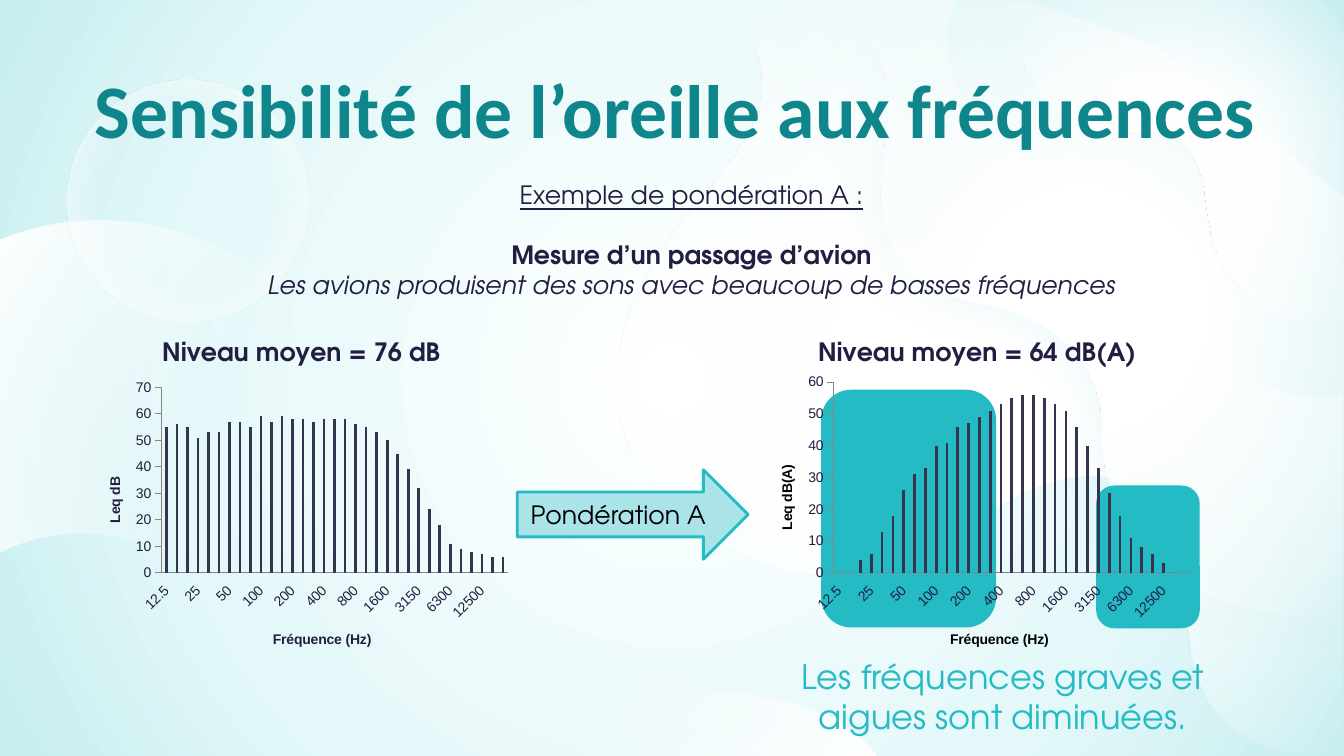
from lxml.etree import SubElement
from pptx import Presentation
from pptx.chart.data import CategoryChartData
from pptx.dml.color import RGBColor
from pptx.enum.chart import XL_CHART_TYPE, XL_TICK_LABEL_POSITION, XL_TICK_MARK
from pptx.enum.shapes import MSO_SHAPE
from pptx.enum.text import MSO_ANCHOR, MSO_AUTO_SIZE, PP_ALIGN
from pptx.oxml import parse_xml
from pptx.oxml.ns import nsdecls, qn
from pptx.util import Pt

COLORS = {"title": "0E868C", "text": "211E42", "teal": "24BBC4", "pale": "AAE3E8",
          "bar": "36334F", "axis": "868686", "black": "000000", "white": "FFFFFF",
          "mist": "E4F8F9", "aqua": "C7EDF0"}
BODY_FONT = "TeX Gyre Adventor"

# Gradient stops: position, colour, opacity in percent
BACKGROUND = [(0, "white", 100), (65, "mist", 100), (100, "aqua", 100)]
GLOW = [(0, "white", 100), (31, "white", 100), (100, "white", 0)]
RIM = [(0, "white", 0), (50, "white", 0), (100, "white", 100)]

# Outlines in inches: a start point, then lines (2 numbers) and cubic curves (6 numbers)
LARGE_WAVE = [
    (7.06, 0), (7.26, .17, 7.46, .36, 7.54, .61), (7.69, 1.12, 7.27, 1.62, 6.92, 2.03),
    (6.38, 2.66, 5.94, 3.5, 6.19, 4.29), (6.29, 4.59, 6.48, 4.85, 6.71, 5.07),
    (7.14, 5.47, 7.72, 5.72, 8.29, 5.72), (8.51, 5.72, 8.73, 5.68, 8.93, 5.6),
    (9.35, 5.44, 9.71, 5.13, 10.11, 4.92), (10.33, 4.81, 10.58, 4.73, 10.82, 4.73),
    (11.03, 4.73, 11.23, 4.79, 11.39, 4.92), (11.92, 5.36, 11.64, 6.24, 11.93, 6.86),
    (12.13, 7.28, 12.6, 7.5, 13.07, 7.5), (13.16, 7.5, 13.24, 7.49, 13.32, 7.48),
    (13.32, 3.9), (13.24, 3.93, 13.14, 3.94, 13.05, 3.94),
    (13.02, 3.94, 12.99, 3.94, 12.96, 3.93), (12.38, 3.89, 11.87, 3.43, 11.73, 2.86),
    (11.67, 2.63, 11.67, 2.39, 11.61, 2.16), (11.55, 1.92, 11.41, 1.69, 11.17, 1.62),
    (11.12, 1.6, 11.05, 1.59, 10.99, 1.59), (10.87, 1.59, 10.74, 1.62, 10.6, 1.62),
    (10.59, 1.62, 10.58, 1.62, 10.56, 1.62), (9.84, 1.62, 9.23, .82, 9.44, .12),
    (9.46, .08, 9.47, .04, 9.49, 0)]
MIDDLE_WAVE = [
    (8.18, .01), (8.18, .01, 8.93, .34, 8.8, 1.29), (8.67, 2.23, 8.68, 2.81, 9.72, 3.01),
    (10.76, 3.21, 10.96, 3.92, 10.93, 4.3), (10.91, 4.68, 11.13, 6.14, 13.3, 6.14),
    (13.31, 6.14, 13.32, 6.14, 13.33, 6.14), (13.33, 1.96), (11.44, .44), (10.21, .02),
    (8.18, .01)]
CORNER_WAVE = [
    (10.18, 0), (10.17, .04, 10.16, .07, 10.15, .1), (9.97, .67, 10.47, 1.33, 11.06, 1.33),
    (11.07, 1.33, 11.09, 1.33, 11.1, 1.33), (11.2, 1.33, 11.31, 1.31, 11.41, 1.31),
    (11.46, 1.31, 11.52, 1.31, 11.57, 1.33), (11.76, 1.39, 11.87, 1.58, 11.92, 1.77),
    (11.97, 1.96, 11.97, 2.16, 12.02, 2.35), (12.14, 2.81, 12.56, 3.19, 13.04, 3.23),
    (13.06, 3.23, 13.09, 3.23, 13.11, 3.23), (13.19, 3.23, 13.26, 3.22, 13.33, 3.21),
    (13.33, .31), (13.33, .14, 13.2, 0, 13.03, 0)]
LEFT_WAVE = [
    (5, 7.5), (5.08, 7.27, 4.98, 6.97, 4.77, 6.84), (4.65, 6.78, 4.53, 6.76, 4.4, 6.76),
    (4.22, 6.76, 4.03, 6.8, 3.85, 6.8), (3.83, 6.8, 3.82, 6.8, 3.8, 6.8),
    (3.38, 6.79, 3, 6.54, 2.68, 6.27), (2.35, 6, 2.05, 5.69, 1.68, 5.5),
    (1.41, 5.36, 1.12, 5.29, .82, 5.29), (.55, 5.29, .27, 5.35, .03, 5.46),
    (.02, 5.47, .01, 5.47, 0, 5.47), (0, 2.38), (.32, 2.25, .65, 2.19, .99, 2.19),
    (1.59, 2.19, 2.19, 2.38, 2.66, 2.75), (3.55, 3.45, 3.93, 4.62, 4.67, 5.48),
    (5.25, 6.16, 6.05, 6.63, 6.92, 6.81), (7.32, 6.88, 7.73, 6.91, 8.1, 7.05),
    (8.34, 7.14, 8.56, 7.3, 8.7, 7.5)]

FREQUENCIES = ("12.5 16 20 25 31.5 40 50 63 80 100 125 160 200 250 315 400 500 630 800 1000 "
               "1250 1600 2000 2500 3150 4000 5000 6300 8000 10000 12500 16000 20000").split()
LEVELS = [55, 56, 55, 51, 53, 53, 57, 57, 55, 59, 57, 59, 58, 58, 57, 58, 58, 58, 56, 55, 53,
          50, 45, 39, 32, 24, 18, 11, 9, 8, 7, 6, 6]
WEIGHTED_LEVELS = [-8, -1, 4, 6, 13, 18, 26, 31, 33, 40, 41, 46, 47, 49, 51, 53, 55, 56, 56,
                   55, 53, 51, 46, 40, 33, 25, 18, 11, 8, 6, 3, 0, -3]


def rgb(name):
    return RGBColor.from_string(COLORS[name])


def set_font(font, color, **values):
    for key, value in values.items():
        setattr(font, key, value)
    font.color.rgb = rgb(color)


def radial_gradient(fill, stops):
    """Turn a fill into a circular gradient around the centre."""
    fill.gradient()
    gradient = fill._fill._gradFill
    for child in list(gradient):
        gradient.remove(child)
    stop_list = SubElement(gradient, qn("a:gsLst"))
    for position, color, opacity in stops:
        stop = SubElement(stop_list, qn("a:gs"), pos=str(position * 1000))
        tone = SubElement(stop, qn("a:srgbClr"), val=COLORS[color])
        SubElement(tone, qn("a:alpha"), val=str(opacity * 1000))
    circle = SubElement(gradient, qn("a:path"), path="circle")
    SubElement(circle, qn("a:fillToRect"), dict.fromkeys("ltrb", "50000"))


def add_wave(slide, outline, stops):
    """Draw an outline through its nodes, then bend the curved sides."""
    nodes = [[round(value * 1000) for value in segment[-2:]] for segment in outline]
    left, top = map(min, zip(*nodes))
    builder = slide.shapes.build_freeform(*nodes[0], scale=Pt(72) / 1000)
    builder.add_line_segments(nodes[1:], close=True)
    shape = builder.convert_to_shape()
    sides = list(shape.element.iter(qn("a:lnTo")))
    for side, segment in zip(sides, outline[1:]):
        if len(segment) == 6:
            side.tag = qn("a:cubicBezTo")
            for index in (0, 2):
                x, y = (round(value * 1000) for value in segment[index:index + 2])
                handle = parse_xml(f'<a:pt {nsdecls("a")} x="{x - left}" y="{y - top}"/>')
                side.insert(index // 2, handle)
    shape.shadow.inherit = False
    shape.line.fill.background()
    radial_gradient(shape.fill, stops)
    return shape


def add_glow(shape, color, opacity, blur):
    effects = shape.element.spPr.find(qn("a:effectLst"))
    shadow = SubElement(effects, qn("a:outerShdw"), blurRad=str(Pt(blur)), dist="0", dir="0")
    tone = SubElement(shadow, qn("a:srgbClr"), val=COLORS[color])
    SubElement(tone, qn("a:alpha"), val=str(opacity * 1000))


def add_panel(slide, kind, box, fill):
    shape = slide.shapes.add_shape(kind, *map(Pt, box))
    shape.shadow.inherit = False
    shape.fill.solid()
    shape.fill.fore_color.rgb = rgb(fill)
    shape.line.color.rgb = rgb("teal")
    shape.line.width = Pt(2)


def write(frame, lines, inset=(7.2, 3.6)):
    """Fill a text frame with centred lines of (text, space before, font values)."""
    for key, value in {"word_wrap": True, "auto_size": MSO_AUTO_SIZE.NONE,
                       "vertical_anchor": MSO_ANCHOR.TOP,
                       "margin_left": Pt(inset[0]), "margin_right": Pt(inset[0]),
                       "margin_top": Pt(inset[1]), "margin_bottom": Pt(inset[1])}.items():
        setattr(frame, key, value)
    for index, (text, space, values) in enumerate(lines):
        paragraph = frame.add_paragraph() if index else frame.paragraphs[0]
        paragraph.alignment = PP_ALIGN.CENTER
        paragraph.space_before = Pt(space)
        run = paragraph.add_run()
        run.text = text
        set_font(run.font, **values)


def add_text(slide, box, lines, **options):
    write(slide.shapes.add_textbox(*map(Pt, box)).text_frame, lines, **options)


def add_spectrum(slide, box, title, unit, levels, top, title_color, plot):
    data = CategoryChartData()
    data.categories = FREQUENCIES
    data.add_series("Series 1", levels)
    chart = slide.shapes.add_chart(XL_CHART_TYPE.COLUMN_CLUSTERED, *map(Pt, box), data).chart
    set_font(chart.font, "text", name="Arial", size=Pt(10))
    chart.has_legend = False
    chart.chart_title.text_frame.text = title
    chart.chart_title.include_in_layout = False
    set_font(chart.chart_title.text_frame.paragraphs[0].runs[0].font, "text",
             name=BODY_FONT, size=Pt(18), bold=True)
    bars = chart.plots[0]
    bars.gap_width = 300
    bars.vary_by_categories = False
    bars.series[0].invert_if_negative = False
    bars.series[0].format.fill.solid()
    bars.series[0].format.fill.fore_color.rgb = rgb("bar")

    # Axes
    for axis, name, tick in ((chart.category_axis, "Fréquence (Hz)", XL_TICK_MARK.NONE),
                             (chart.value_axis, unit, XL_TICK_MARK.OUTSIDE)):
        axis.has_major_gridlines = False
        axis.major_tick_mark = tick
        axis.format.line.color.rgb = rgb("axis")
        axis.axis_title.text_frame.text = name
        set_font(axis.axis_title.text_frame.paragraphs[0].runs[0].font, title_color,
                 name="Arial", size=Pt(10), bold=True)
        set_font(axis.tick_labels.font, "text", name="Arial", size=Pt(10))
    for key, value in {"minimum_scale": 0, "maximum_scale": top, "major_unit": 10}.items():
        setattr(chart.value_axis, key, value)
    category_axis = chart.category_axis
    category_axis.tick_label_position = XL_TICK_LABEL_POSITION.LOW
    category_axis.tick_labels.offset = 0
    labels = category_axis._element
    labels.find(qn("c:txPr")).find(qn("a:bodyPr")).set("rot", "-2700000")
    labels.find(qn("c:noMultiLvlLbl")).addprevious(
        parse_xml(f'<c:tickLblSkip {nsdecls("c")} val="3"/>'))

    # Plot area as shares of the chart
    area = chart._chartSpace.chart.plotArea
    for old in area.findall(qn("c:layout")):
        area.remove(old)
    parts = "".join(f'<c:{key} val="{value}"/>' for key, value in zip("xywh", plot))
    area.insert(0, parse_xml(
        f'<c:layout {nsdecls("c")}><c:manualLayout><c:layoutTarget val="inner"/>'
        f'<c:xMode val="edge"/><c:yMode val="edge"/>{parts}</c:manualLayout></c:layout>'))


def main():
    presentation = Presentation()
    presentation.slide_width, presentation.slide_height = Pt(960), Pt(540)
    slide = presentation.slides.add_slide(presentation.slide_layouts[5])

    # Backdrop
    radial_gradient(slide.background.fill, BACKGROUND)
    add_wave(slide, LARGE_WAVE, GLOW)
    add_glow(add_wave(slide, MIDDLE_WAVE, GLOW), "aqua", 41, 29.2)
    add_wave(slide, CORNER_WAVE, GLOW)
    add_wave(slide, LEFT_WAVE, RIM)
    bubble = slide.shapes.add_shape(MSO_SHAPE.OVAL, Pt(47.5), Pt(57), Pt(173), Pt(173))
    bubble.shadow.inherit = False
    bubble.line.fill.background()
    radial_gradient(bubble.fill, RIM)

    # Reduced frequency ranges
    add_panel(slide, MSO_SHAPE.ROUNDED_RECTANGLE, (784, 347.8, 72, 100), "teal")
    add_panel(slide, MSO_SHAPE.ROUNDED_RECTANGLE, (587.5, 279.4, 123, 167.8), "teal")

    # Title, raised above the backdrop
    title = slide.shapes.title
    title.element.getparent().append(title.element)
    for key, value in zip(("left", "top", "width", "height"), (-12.2, 37.4, 989.3, 52.6)):
        setattr(title, key, Pt(value))
    write(title.text_frame, [("Sensibilité de l’oreille aux fréquences", 0, dict(
        color="title", name="Calibri", size=Pt(54), bold=True))], inset=(7.2, 7.2))

    # Introduction
    body = dict(color="text", name=BODY_FONT, size=Pt(18))
    add_text(slide, (103.7, 121, 780.5, 140.4), [
        ("Exemple de pondération A :", 0, dict(body, underline=True)),
        ("Mesure d’un passage d’avion", 21, dict(body, bold=True)),
        ("Les avions produisent des sons avec beaucoup de basses fréquences", 0,
         dict(body, italic=True))], inset=(7.2, 7.2))

    # Spectra before and after weighting
    add_spectrum(slide, (61.2, 230.4, 308, 243.4), "Niveau moyen = 76 dB", "Leq dB",
                 LEVELS, 70, "text", (0.175, 0.19, 0.805, 0.545))
    add_spectrum(slide, (540, 230.4, 316, 243.4), "Niveau moyen = 64 dB(A)", "Leq dB(A)",
                 WEIGHTED_LEVELS, 60, "black", (0.175, 0.175, 0.807, 0.56))

    # Weighting arrow and conclusion
    add_panel(slide, MSO_SHAPE.RIGHT_ARROW, (369.4, 335.5, 165, 64), "pale")
    add_text(slide, (367.2, 352.8, 149, 28.8),
             [("Pondération A", 0, dict(body, color="black"))])
    add_text(slide, (562.3, 465, 308, 65.5), [
        ("Les fréquences graves et aigues sont diminuées.", 0,
         dict(body, color="teal", size=Pt(24)))])
    presentation.save("out.pptx")


if __name__ == "__main__":
    main()
